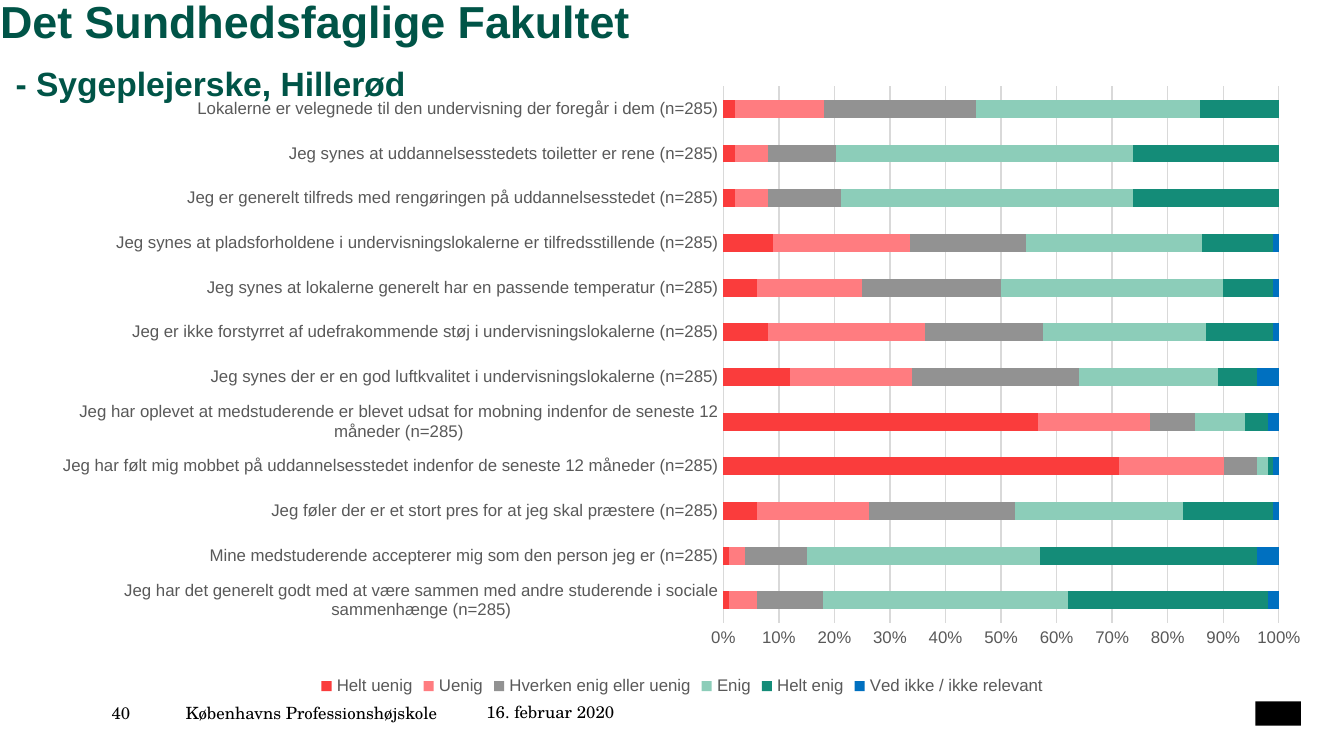
"""Build the survey slide for Sygeplejerske, Hillerød, with a stacked bar chart."""
from lxml import etree
from pptx import Presentation
from pptx import util as u
from pptx.chart.data import CategoryChartData
from pptx.dml.color import RGBColor
from pptx.enum import chart as charts, shapes, text
from pptx.oxml.ns import qn

SERIF = "TeX Gyre Schola"
GREEN, BLACK, GREY, LIGHT = "005447", "000000", "595959", "D9D9D9"


def style_font(font, size, color, name="Arial", bold=False):
    font.size = u.Pt(size)
    font.name = name
    font.bold = bold
    font.color.rgb = RGBColor.from_string(color)


def add_text_box(left, top, width, height):
    box = slide.shapes.add_textbox(u.Pt(left), u.Pt(top), u.Pt(width), u.Pt(height))
    frame = box.text_frame
    frame.margin_left = frame.margin_top = frame.margin_right = frame.margin_bottom = 0
    frame.word_wrap = True
    frame.vertical_anchor = text.MSO_ANCHOR.TOP
    return frame.paragraphs[0]


presentation = Presentation()
presentation.slide_width = u.Pt(720)
presentation.slide_height = u.Pt(405)
slide = presentation.slides.add_slide(presentation.slide_layouts[6])

footers = [
    ("Københavns Professionshøjskole", 99.4, 376.6, 150),
    ("40", 59.8, 376.6, 33),
    ("16. februar 2020", 260.6, 375.8, 201.6),
]
for wording, left, top, width in footers:
    run = add_text_box(left, top, width, 10.8).add_run()
    run.text = wording
    style_font(run.font, 9, BLACK, SERIF)

logo_block = slide.shapes.add_shape(
    shapes.MSO_SHAPE.RECTANGLE, u.Pt(672.5), u.Pt(375.8), u.Pt(24.5), u.Pt(13))
logo_block.shadow.inherit = False
logo_block.fill.solid()
logo_block.fill.fore_color.rgb = RGBColor.from_string(BLACK)
logo_block.line.fill.background()

paragraph = add_text_box(0, 0, 589.7, 77.8)
paragraph.line_spacing = 0.9
run = paragraph.add_run()
run.text = "Det Sundhedsfaglige Fakultet"
style_font(run.font, 24, GREEN, bold=True)
paragraph.add_line_break()
for wording, size in [(" ", 30), ("- Sygeplejerske, Hillerød", 18)]:
    run = paragraph.add_run()
    run.text = wording
    style_font(run.font, size, GREEN, bold=True)

statements = [
    "Jeg har det generelt godt med at være sammen med andre studerende i sociale sammenhænge",
    "Mine medstuderende accepterer mig som den person jeg er",
    "Jeg føler der er et stort pres for at jeg skal præstere",
    "Jeg har følt mig mobbet på uddannelsesstedet indenfor de seneste 12 måneder",
    "Jeg har oplevet at medstuderende er blevet udsat for mobning indenfor de seneste 12 måneder",
    "Jeg synes der er en god luftkvalitet i undervisningslokalerne",
    "Jeg er ikke forstyrret af udefrakommende støj i undervisningslokalerne",
    "Jeg synes at lokalerne generelt har en passende temperatur",
    "Jeg synes at pladsforholdene i undervisningslokalerne er tilfredsstillende",
    "Jeg er generelt tilfreds med rengøringen på uddannelsesstedet",
    "Jeg synes at uddannelsesstedets toiletter er rene",
    "Lokalerne er velegnede til den undervisning der foregår i dem",
]
answers = [
    ("Helt uenig", "FA3C3C", (1, 1, 6, 72, 56, 12, 8, 6, 9, 2, 2, 2)),
    ("Uenig", "FF7C80", (5, 3, 20, 19, 20, 22, 28, 19, 25, 6, 6, 16)),
    ("Hverken enig eller uenig", "929292", (12, 11, 26, 6, 8, 30, 21, 25, 21, 13, 12, 27)),
    ("Enig", "8CCDB9", (44, 42, 30, 2, 9, 25, 29, 40, 32, 52, 53, 40)),
    ("Helt enig", "148C78", (36, 39, 16, 1, 4, 7, 12, 9, 13, 26, 26, 14)),
    ("Ved ikke / ikke relevant", "0070C0", (2, 4, 1, 1, 2, 4, 1, 1, 1, None, 0, 0)),
]
chart_data = CategoryChartData()
chart_data.categories = [f"{statement} (n=285)" for statement in statements]
for name, color, values in answers:
    chart_data.add_series(name, values)
chart = slide.shapes.add_chart(
    charts.XL_CHART_TYPE.BAR_STACKED_100,
    u.Pt(20.2), u.Pt(39.6), u.Pt(690.5), u.Pt(336.2), chart_data).chart
style_font(chart.font, 10, BLACK)
chart.has_title = False

plot = chart.plots[0]
plot.gap_width = 150
plot.overlap = 100
plot.vary_by_categories = False
for series, (name, color, values) in zip(plot.series, answers):
    series.format.fill.solid()
    series.format.fill.fore_color.rgb = RGBColor.from_string(color)

for axis in (chart.category_axis, chart.value_axis):
    axis.major_tick_mark = axis.minor_tick_mark = charts.XL_TICK_MARK.NONE
    style_font(axis.tick_labels.font, 9, GREY)
chart.category_axis.has_major_gridlines = False
chart.value_axis.has_major_gridlines = True
chart.value_axis.major_unit = 0.1
chart.value_axis.tick_labels.number_format = "0%"
chart.value_axis.tick_labels.number_format_is_linked = False
chart.value_axis.format.line.fill.background()
for line in (chart.category_axis.format.line, chart.value_axis.major_gridlines.format.line):
    line.width = u.Pt(0.75)
    line.color.rgb = RGBColor.from_string(LIGHT)

chart.has_legend = True
chart.legend.position = charts.XL_LEGEND_POSITION.BOTTOM
chart.legend.include_in_layout = False
style_font(chart.legend.font, 9, GREY)

plot_area = chart.element.find(".//" + qn("c:plotArea"))
for empty_layout in plot_area.findall(qn("c:layout")):
    plot_area.remove(empty_layout)
layout = etree.Element(qn("c:layout"))
plot_area.insert(0, layout)
manual = etree.SubElement(layout, qn("c:manualLayout"))
for tag, value in [("layoutTarget", "inner"), ("xMode", "edge"), ("yMode", "edge"),
                   ("x", "0.532"), ("y", "0.02"), ("w", "0.431"), ("h", "0.855")]:
    etree.SubElement(manual, qn(f"c:{tag}")).set("val", value)

presentation.save("out.pptx")
